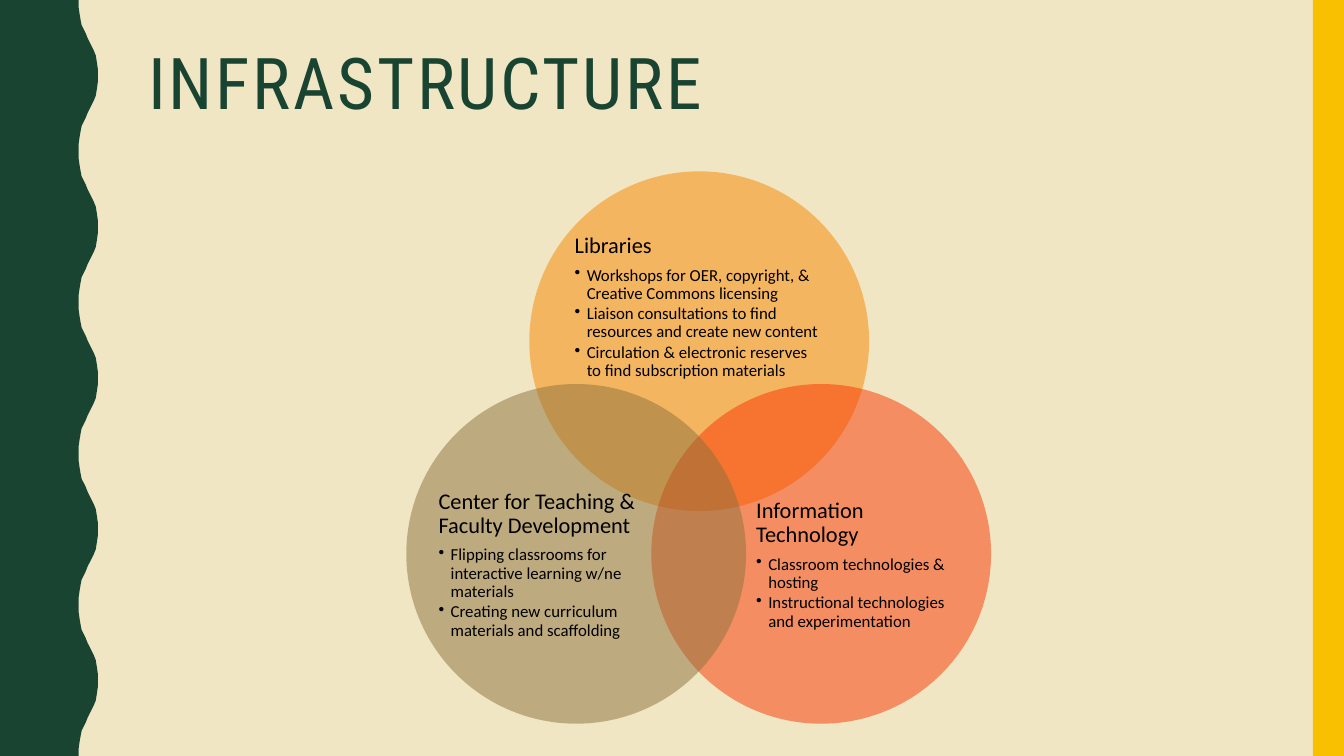
from dataclasses import dataclass

from lxml.etree import SubElement
from pptx import Presentation
from pptx.dml.color import RGBColor
from pptx.enum.shapes import MSO_SHAPE as Preset
from pptx.enum.text import MSO_ANCHOR as Anchor, PP_ALIGN as Align
from pptx.oxml.ns import qn
from pptx.shapes.autoshape import Shape
from pptx.slide import Slide
from pptx.text.text import TextFrame
from pptx.util import Emu, Pt

PX = 9144  # EMU per px, 100 px to the inch
SLIDE_WIDTH, SLIDE_HEIGHT = 1333, 750
CIRCLE_SIZE = 337
BULLET_INDENT = 12
WAVE_PERIOD = 150
WAVE_RISE = [(78, 0), (78, 7), (79, 14), (80, 20), (81, 25), (83, 29), (85, 33), (87, 38),
             (89, 42), (91, 46), (93, 50), (95, 55), (96, 61), (97, 68), (97, 75)]
COLORS = {
    "cream": "F0E6C3",
    "green": "194431",
    "yellow": "F8C000",
    "orange": "F88600",
    "red": "F83500",
    "brown": "8B723D",
    "black": "000000",
}


@dataclass(frozen=True)
class Box:
    left: int
    top: int
    width: int
    height: int

    def emu(self) -> tuple[Emu, Emu, Emu, Emu]:
        return Emu(self.left * PX), Emu(self.top * PX), Emu(self.width * PX), Emu(self.height * PX)


@dataclass(frozen=True)
class Department:
    name: str
    duties: tuple[str, ...]
    color: str
    circle_left: int
    circle_top: int
    label: Box


DEPARTMENTS = [
    Department("Libraries",
               ("Workshops for OER, copyright, & Creative Commons licensing",
                "Liaison consultations to find resources and create new content",
                "Circulation & electronic reserves to find subscription materials"),
               "orange", 525, 170, Box(570, 229, 247, 152)),
    Department("Information Technology",
               ("Classroom technologies & hosting",
                "Instructional technologies and experimentation"),
               "red", 646, 381, Box(750, 468, 202, 185)),
    Department("Center for Teaching & Faculty Development",
               ("Flipping classrooms for interactive learning w/ne materials",
                "Creating new curriculum materials and scaffolding"),
               "brown", 403, 381, Box(435, 468, 202, 185)),
]


def rgb(color: str) -> RGBColor:
    return RGBColor.from_string(COLORS[color])


def paint(shape: Shape, color: str) -> None:
    shape.shadow.inherit = False
    shape.fill.solid()
    shape.fill.fore_color.rgb = rgb(color)
    shape.line.fill.background()


def add_preset(slide: Slide, preset: Preset, box: Box, color: str) -> Shape:
    shape = slide.shapes.add_shape(preset, *box.emu())
    paint(shape, color)
    return shape


def add_wave(slide: Slide) -> None:
    """Draw the left band, whose right edge repeats one mirrored wave."""
    fall = [(x, WAVE_PERIOD - y) for x, y in reversed(WAVE_RISE[1:-1])]
    edge = [(x, y + start)
            for start in range(0, SLIDE_HEIGHT, WAVE_PERIOD)
            for x, y in WAVE_RISE + fall]
    outline = slide.shapes.build_freeform(0, 0, scale=PX)
    outline.add_line_segments(edge + [(WAVE_RISE[0][0], SLIDE_HEIGHT), (0, SLIDE_HEIGHT)])
    paint(outline.convert_to_shape(), "green")


def clear_margins(frame: TextFrame) -> None:
    frame.margin_left = frame.margin_right = frame.margin_top = frame.margin_bottom = 0


def add_department(slide: Slide, department: Department) -> None:
    circle_box = Box(department.circle_left, department.circle_top, CIRCLE_SIZE, CIRCLE_SIZE)
    circle = add_preset(slide, Preset.OVAL, circle_box, department.color)
    color_element = circle.fill._xPr.find(qn("a:solidFill"))[0]
    SubElement(color_element, qn("a:alpha"), val="50000")

    frame = slide.shapes.add_textbox(*department.label.emu()).text_frame
    frame.word_wrap = True
    frame.vertical_anchor = Anchor.MIDDLE
    clear_margins(frame)
    frame.text = "\n".join((department.name, *department.duties))
    for index, paragraph in enumerate(frame.paragraphs):
        is_duty = index > 0
        paragraph.alignment = Align.LEFT
        paragraph.line_spacing = 0.9
        paragraph.space_after = Pt(1.8 if is_duty else 5.6)
        font = paragraph.runs[0].font
        font.name = "Calibri"
        font.size = Pt(12 if is_duty else 16)
        font.color.rgb = rgb("black")
        if is_duty:
            paragraph.level = 1
            properties = paragraph._p.get_or_add_pPr()
            properties.set("marL", str(BULLET_INDENT * PX))
            properties.set("indent", str(-BULLET_INDENT * PX))
            SubElement(properties, qn("a:buChar"), char="•")


def set_title(slide: Slide, text: str, box: Box) -> None:
    title = slide.shapes.title
    title.left, title.top, title.width, title.height = box.emu()
    frame = title.text_frame
    frame.text = text
    frame.word_wrap = True
    frame.vertical_anchor = Anchor.TOP
    heading = frame.paragraphs[0]
    heading.alignment = Align.LEFT
    heading.line_spacing = 0.9
    run = heading.runs[0]
    run.font.name = "Roboto Condensed"
    run.font.size = Pt(51)
    run.font.color.rgb = rgb("green")
    run._r.get_or_add_rPr().set("spc", "200")


def main() -> None:
    deck = Presentation()
    deck.slide_width, deck.slide_height = Emu(SLIDE_WIDTH * PX), Emu(SLIDE_HEIGHT * PX)
    slide = deck.slides.add_slide(deck.slide_layouts.get_by_name("Title Only"))
    slide.background.fill.solid()
    slide.background.fill.fore_color.rgb = rgb("cream")
    add_wave(slide)
    add_preset(slide, Preset.RECTANGLE, Box(1302, 0, 31, SLIDE_HEIGHT), "yellow")
    set_title(slide, "INFRASTRUCTURE", Box(137, 42, 1113, 163))
    for department in DEPARTMENTS:
        add_department(slide, department)
    deck.save("out.pptx")


if __name__ == "__main__":
    main()
